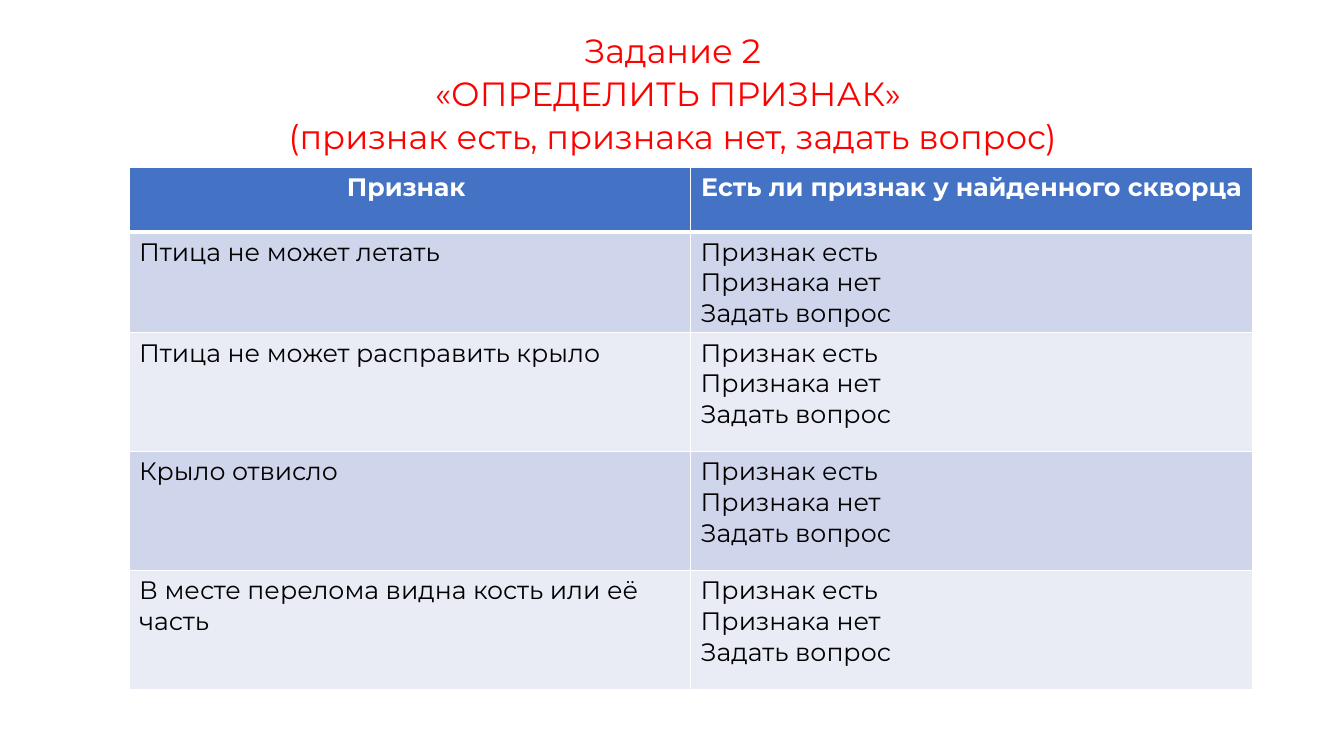
from dataclasses import dataclass

from lxml import etree
from pptx import Presentation
from pptx import util as u
from pptx.dml.color import RGBColor
from pptx.enum import text
from pptx.oxml import ns


@dataclass(frozen=True)
class Theme:
    """Colours, typeface and type sizes of the slide."""
    typeface: str = "Montserrat"
    title_size: int = 24
    table_size: int = 18
    title: str = "FF0000"
    header: str = "4472C4"
    header_ink: str = "FFFFFF"
    body_ink: str = "000000"
    border: str = "FFFFFF"
    bands: tuple = ("CFD5EA", "E9EBF5")


@dataclass(frozen=True)
class Box:
    """A region of the slide in px."""
    left: int
    top: int
    width: int
    height: int

    def emu(self):
        """Return left, top, width and height in EMU."""
        return [px(side) for side in (self.left, self.top, self.width, self.height)]


THEME = Theme()
SCALE = 9144
TITLE = ["Задание 2", "«ОПРЕДЕЛИТЬ ПРИЗНАК» ", "(признак есть, признака нет, задать вопрос)"]
HEADERS = ["Признак ", "Есть ли признак у найденного скворца"]
SIGNS = [
    "Птица не может летать",
    "Птица не может расправить крыло",
    "Крыло отвисло",
    "В месте перелома видна кость или её часть",
]
ANSWERS = ["Признак есть", "Признака нет", "Задать вопрос"]
ROW_HEIGHTS = [64, 91, 118, 118, 118]


def px(length):
    """Turn px into EMU."""
    return u.Emu(length * SCALE)


def style_paragraph(para, size, colour, bold=False, align=text.PP_ALIGN.LEFT):
    """Set the font and alignment of a paragraph."""
    para.alignment = align
    para.font.name = THEME.typeface
    para.font.size = u.Pt(size)
    para.font.bold = bold
    para.font.color.rgb = RGBColor.from_string(colour)


def add_borders(cell, top, bottom):
    """Draw the four borders of a cell, with widths in points."""
    properties = cell._tc.get_or_add_tcPr()
    widths = {"a:lnL": 1, "a:lnR": 1, "a:lnT": top, "a:lnB": bottom}
    for position, (tag, width) in enumerate(widths.items()):
        line = etree.Element(ns.qn(tag), w=str(u.Pt(width)))
        fill = etree.SubElement(line, ns.qn("a:solidFill"))
        etree.SubElement(fill, ns.qn("a:srgbClr"), val=THEME.border)
        properties.insert(position, line)


def fill_cell(cell, lines, fill, top=1, bottom=1, **style):
    """Write the lines into a cell and style it."""
    cell.text = "\n".join(lines)
    for para in cell.text_frame.paragraphs:
        style_paragraph(para, THEME.table_size, **style)
    cell.fill.solid()
    cell.fill.fore_color.rgb = RGBColor.from_string(fill)
    add_borders(cell, top, bottom)


def add_title(page, box):
    """Place the three-line heading in the box."""
    frame = page.shapes.add_textbox(*box.emu()).text_frame
    frame.word_wrap = True
    frame.vertical_anchor = text.MSO_ANCHOR.MIDDLE
    frame.margin_bottom = px(48)
    para = frame.paragraphs[0]
    para.text = "\v".join(TITLE)
    para.line_spacing = 1.07
    para.space_after = u.Pt(8)
    style_paragraph(para, THEME.title_size, THEME.title, align=text.PP_ALIGN.CENTER)


def add_sign_table(page, box):
    """Place the table of signs and possible answers in the box."""
    table = page.shapes.add_table(len(SIGNS) + 1, len(HEADERS), *box.emu()).table
    for row, height in zip(table.rows, ROW_HEIGHTS):
        row.height = px(height)
    for column, header in enumerate(HEADERS):
        table.columns[column].width = px(box.width // len(HEADERS))
        fill_cell(table.cell(0, column), [header], THEME.header, bottom=3,
                  colour=THEME.header_ink, bold=True, align=text.PP_ALIGN.CENTER)
    for row, sign in enumerate(SIGNS, start=1):
        band = THEME.bands[(row - 1) % len(THEME.bands)]
        for column, lines in enumerate(([sign], ANSWERS)):
            fill_cell(table.cell(row, column), lines, band,
                      top=3 if row == 1 else 1, colour=THEME.body_ink)


def main():
    """Build the slide and save it."""
    deck = Presentation()
    deck.slide_width, deck.slide_height = px(1333), px(750)
    page = deck.slides.add_slide(deck.slide_layouts[6])
    add_title(page, Box(92, 40, 1150, 145))
    add_sign_table(page, Box(128, 166, 1114, sum(ROW_HEIGHTS)))
    deck.save("out.pptx")


if __name__ == "__main__":
    main()
